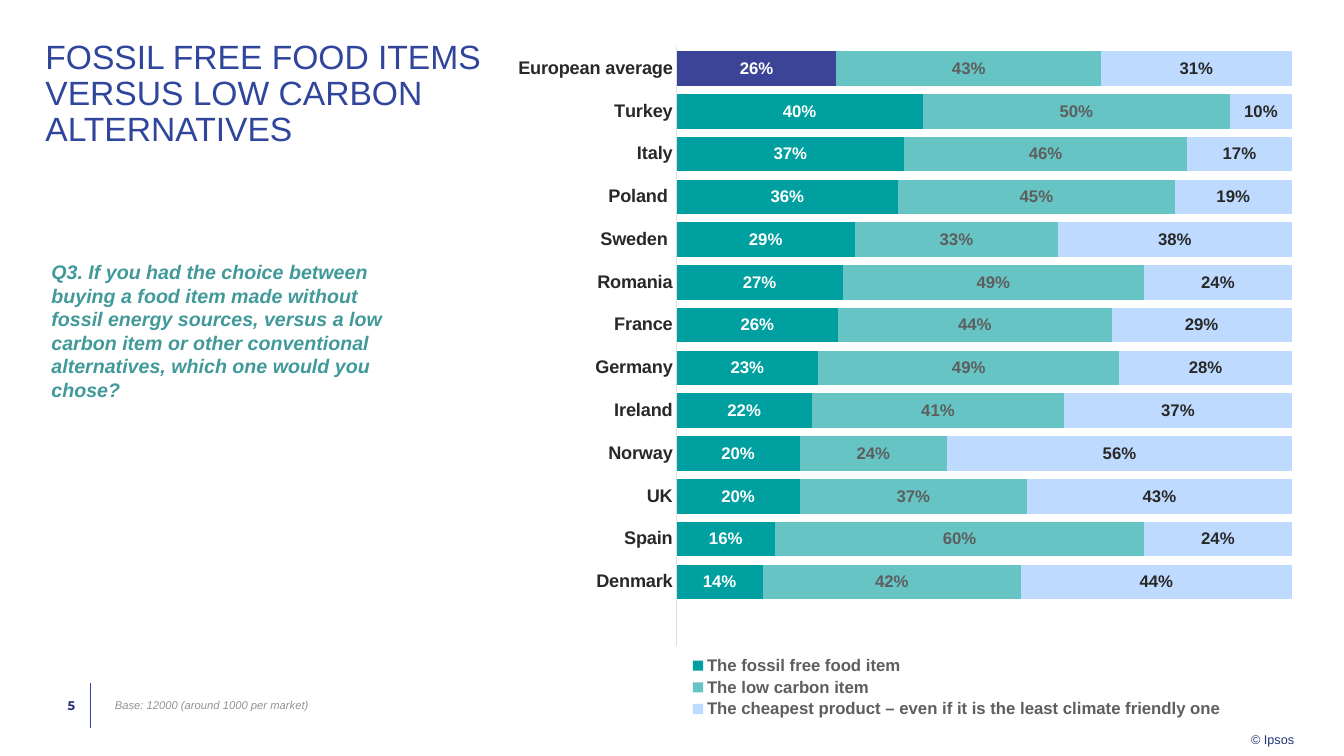
from lxml import etree
from pptx import Presentation
from pptx import util as u
from pptx.chart.data import CategoryChartData
from pptx.dml.color import RGBColor
from pptx.enum import chart as ch, shapes, text
from pptx.oxml import parse_xml
from pptx.oxml.ns import nsdecls, qn

NAVY, BLUE, INK, GREY = "233475", "2F469C", "282828", "5E5E5E"
COUNTRIES = ["European average", "Turkey", "Italy", "Poland ", "Sweden ", "Romania", "France",
             "Germany", " Ireland", "Norway", "UK", "Spain", "Denmark", ""]
SERIES = [
    ("The fossil free food item", "009FA0", "FFFFFF",
     [26, 40, 37, 36, 29, 27, 26, 23, 22, 20, 20, 16, 14]),
    ("The low carbon item", "66C4C4", GREY,
     [43, 50, 46, 45, 33, 49, 44, 49, 41, 24, 37, 60, 42]),
    ("The cheapest product – even if it is the least climate friendly one", "BEDBFF", INK,
     [31, 10, 17, 19, 38, 24, 29, 28, 37, 56, 43, 24, 44]),
]


def color(value):
    return RGBColor.from_string(value)


def set_font(font, size, value, name="Arial", bold=False, italic=False):
    font.name, font.size = name, u.Pt(size)
    font.bold, font.italic = bold, italic
    font.color.rgb = color(value)


def place(shape, box):
    shape.left, shape.top, shape.width, shape.height = (u.Inches(length) for length in box)


def fill_text(shape, words, size, value, margins=(0, 0, 0, 0), anchor=text.MSO_ANCHOR.TOP,
              align=text.PP_ALIGN.LEFT, wrap=True, **style):
    frame = shape.text_frame
    frame.word_wrap = wrap
    frame.auto_size = text.MSO_AUTO_SIZE.NONE
    frame.vertical_anchor = anchor
    frame.margin_left, frame.margin_top, frame.margin_right, frame.margin_bottom = (
        u.Inches(margin) for margin in margins)
    paragraph = frame.paragraphs[0]
    paragraph.alignment = align
    run = paragraph.add_run()
    run.text = words
    set_font(run.font, size, value, **style)
    return paragraph


def add_text(slide, box, *content, **options):
    shape = slide.shapes.add_textbox(*(u.Inches(length) for length in box))
    return fill_text(shape, *content, **options)


def add_title(slide, box, words):
    place(slide.shapes.title, box)
    paragraph = fill_text(slide.shapes.title, words, 24, BLUE)
    paragraph.line_spacing = 0.9


def add_divider(slide, left, top, bottom):
    line = slide.shapes.add_connector(shapes.MSO_CONNECTOR.STRAIGHT, u.Inches(left),
                                      u.Inches(top), u.Inches(left), u.Inches(bottom))
    line.line.color.rgb = color(BLUE)
    line.line.width = u.Pt(0.5)
    etree.SubElement(line._element.spPr, qn("a:effectLst"))


def set_layout(element, box, inner=False):
    for old in element.findall(qn("c:layout")):
        element.remove(old)
    target = '<c:layoutTarget val="inner"/>' if inner else ""
    modes = "".join(f'<c:{axis}Mode val="edge"/>' for axis in "xy")
    sizes = "".join(f'<c:{key} val="{value}"/>' for key, value in zip("xywh", box))
    layout = parse_xml(f'<c:layout {nsdecls("c")}><c:manualLayout>{target}{modes}{sizes}'
                       '</c:manualLayout></c:layout>')
    position = element.find(qn("c:legendPos"))
    if position is None:
        element.insert(0, layout)
    else:
        position.addnext(layout)


def style_axes(chart):
    countries = chart.category_axis
    countries.reverse_order = True
    countries.has_major_gridlines = False
    countries.major_tick_mark = ch.XL_TICK_MARK.NONE
    countries.format.line.color.rgb = color("DFDFDF")
    countries.format.line.width = u.Pt(0.75)
    set_font(countries.tick_labels.font, 13, INK, bold=True)
    shares = chart.value_axis
    shares.visible = False
    shares.has_major_gridlines = False
    shares.minimum_scale, shares.maximum_scale = 0, 1


def style_series(series, fill, label_color):
    series.invert_if_negative = False
    series.format.fill.solid()
    series.format.fill.fore_color.rgb = color(fill)
    labels = series.data_labels
    labels.show_value = True
    labels.number_format, labels.number_format_is_linked = "0%", False
    labels.position = ch.XL_LABEL_POSITION.CENTER
    set_font(labels.font, 12, label_color, bold=True)


def add_share_chart(slide, box):
    data = CategoryChartData(number_format="0%")
    data.categories = COUNTRIES
    for name, _, _, percents in SERIES:
        data.add_series(name, [percent / 100 for percent in percents] + [None])
    chart = slide.shapes.add_chart(ch.XL_CHART_TYPE.BAR_STACKED_100,
                                   *(u.Inches(length) for length in box), data).chart
    set_font(chart.font, 10, INK)
    chart.has_title = False
    plot = chart.plots[0]
    plot.gap_width, plot.overlap = 24, 100
    plot.vary_by_categories = False
    for series, (_, fill, label_color, _) in zip(plot.series, SERIES):
        style_series(series, fill, label_color)
    average = plot.series[0].points[0].format.fill
    average.solid()
    average.fore_color.rgb = color("3B4496")
    style_axes(chart)
    chart.has_legend = True
    chart.legend.position = ch.XL_LEGEND_POSITION.BOTTOM
    chart.legend.include_in_layout = False
    set_font(chart.legend.font, 12, GREY, bold=True)
    set_layout(chart.legend._element, (0.2, 0.89, 0.72, 0.1))
    set_layout(chart._chartSpace.chart.plotArea, (0.2, 0.01, 0.79, 0.87), inner=True)


def main():
    presentation = Presentation()
    presentation.slide_width, presentation.slide_height = u.Inches(13.33), u.Inches(7.5)
    slide = presentation.slides.add_slide(presentation.slide_layouts[5])
    middle = text.MSO_ANCHOR.MIDDLE
    add_divider(slide, 0.9, 6.78, 7.22)
    add_text(slide, (12.41, 7.22, 0.43, 0.19), "© Ipsos", 9, NAVY,
             margins=(0, 0.04, 0, 0), wrap=False)
    add_text(slide, (0.45, 6.78, 0.45, 0.43), "5 ", 9, NAVY, margins=(0, 0, 0.12, 0),
             anchor=middle, align=text.PP_ALIGN.RIGHT, name="Montserrat", bold=True)
    add_title(slide, (0.45, 0.4, 4.69, 0.42),
              "FOSSIL FREE FOOD ITEMS VERSUS LOW CARBON ALTERNATIVES")
    add_share_chart(slide, (5.14, 0.4, 7.75, 6.83))
    question = add_text(slide, (0.51, 2.58, 3.31, 1.41),
                        "Q3. If you had the choice between buying a food item made without "
                        "fossil energy sources, versus a low carbon item or other conventional "
                        "alternatives, which one would you chose?",
                        14, "419999", bold=True, italic=True)
    question.space_after = u.Pt(4)
    add_text(slide, (1.04, 6.78, 2.78, 0.43), "Base: 12000 (around 1000 per market)", 8, "939393",
             margins=(0.1, 0.05, 0.1, 0.05), anchor=middle, italic=True)
    presentation.save("out.pptx")


if __name__ == "__main__":
    main()
